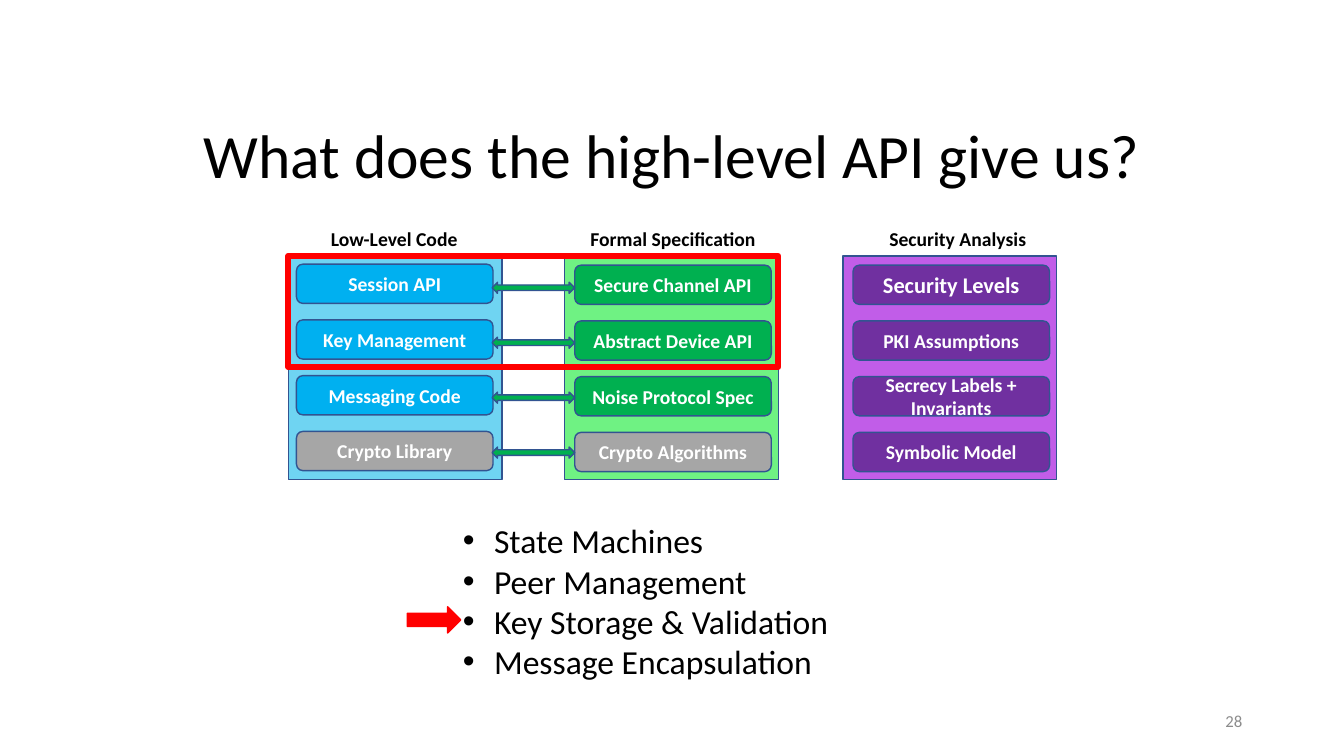
from lxml import etree
from pptx import Presentation
from pptx.dml.color import RGBColor
from pptx.enum.shapes import MSO_SHAPE
from pptx.enum.text import MSO_ANCHOR, MSO_AUTO_SIZE, PP_ALIGN
from pptx.oxml.ns import qn
from pptx.util import Inches, Pt

RECT, CARD = MSO_SHAPE.RECTANGLE, MSO_SHAPE.ROUNDED_RECTANGLE
LINK, POINTER = MSO_SHAPE.LEFT_RIGHT_ARROW, MSO_SHAPE.RIGHT_ARROW
TOP, MIDDLE = MSO_ANCHOR.TOP, MSO_ANCHOR.MIDDLE
LEFT, CENTER, RIGHT = PP_ALIGN.LEFT, PP_ALIGN.CENTER, PP_ALIGN.RIGHT
NO_FIT = MSO_AUTO_SIZE.NONE

FONT = "Calibri"
BLACK, WHITE, GRAY, RED = "000000", "FFFFFF", "A6A6A6", "FF0000"
BLUE, GREEN, PURPLE, OUTLINE = "00B0F0", "00B050", "7030A0", "325491"
PANEL_W, PANEL_H = 2.12, 2.22
CARD_W, CARD_H, CARD_STEP = 1.95, 0.39, 0.553

# left, panel fill, heading, heading offset and width, card offset, cards
COLUMNS = [
    (2.86, "6FD4F2", "Low-Level Code", 0.23, 1.64, (0.08, 0.08),
     [("Session API", BLUE, 14), ("Key Management", BLUE, 14),
      ("Messaging Code", BLUE, 14), ("Crypto Library", GRAY, 14)]),
    (5.6, "6FF283", "Formal Specification", 0.1, 1.95, (0.1, 0.09),
     [("Secure Channel API", GREEN, 14), ("Abstract Device API", GREEN, 14),
      ("Noise Protocol Spec", GREEN, 14), ("Crypto Algorithms", GRAY, 14)]),
    (8.36, "C15DE8", "Security Analysis", 0.32, 1.64, (0.1, 0.09),
     [("Security Levels", PURPLE, 16), ("PKI Assumptions", PURPLE, 14),
      ("Secrecy Labels + Invariants", PURPLE, 14), ("Symbolic Model", PURPLE, 14)]),
]
BENEFITS = ["State Machines", "Peer Management",
            "Key Storage & Validation", "Message Encapsulation"]


def rgb(value):
    return RGBColor.from_string(value)


def place(sp, x, y, w, h):
    sp.left, sp.top, sp.width, sp.height = (Inches(v) for v in (x, y, w, h))


def write(p, text, size, color=BLACK, bold=False, align=LEFT):
    p.alignment = align
    r = p.add_run()
    r.text = text
    r.font.name, r.font.size, r.font.bold = FONT, Pt(size), bold
    r.font.color.rgb = rgb(color)


def add_shape(s, kind, x, y, w, h, fill=None, line=OUTLINE, weight=1):
    sp = s.shapes.add_shape(kind, *(Inches(v) for v in (x, y, w, h)))
    sp.shadow.inherit = False
    if fill:
        sp.fill.solid()
        sp.fill.fore_color.rgb = rgb(fill)
    else:
        sp.fill.background()
    sp.line.color.rgb = rgb(line)
    sp.line.width = Pt(weight)
    return sp


def add_label(s, x, y, w, h, text, size, color=BLACK, bold=False,
              align=CENTER, anchor=TOP):
    sp = s.shapes.add_textbox(*(Inches(v) for v in (x, y, w, h)))
    tf = sp.text_frame
    tf.word_wrap, tf.vertical_anchor = True, anchor
    write(tf.paragraphs[0], text, size, color, bold, align)


def add_title(s, x, y, w, h, text):
    sp = s.shapes.title
    place(sp, x, y, w, h)
    tf = sp.text_frame
    tf.auto_size, tf.vertical_anchor = NO_FIT, TOP
    p = tf.paragraphs[0]
    p.line_spacing = 0.9
    write(p, text, 44, align=CENTER)


def add_column(s, x, y, fill, heading, head_dx, head_w, card_offset, cards):
    add_shape(s, RECT, x, y, PANEL_W, PANEL_H, fill)
    add_label(s, x + head_dx, y - 0.34, head_w, 0.34, heading, 14, bold=True)
    dx, dy = card_offset
    for i, (text, color, size) in enumerate(cards):
        sp = add_shape(s, CARD, x + dx, y + dy + i * CARD_STEP,
                       CARD_W, CARD_H, color)
        tf = sp.text_frame
        tf.word_wrap, tf.vertical_anchor = True, MIDDLE
        write(tf.paragraphs[0], text, size, WHITE, True, CENTER)


def add_stack(s, y):
    for x, *column in COLUMNS:
        add_column(s, x, y, *column)
    # Arrows between code and specification
    for i in range(4):
        add_shape(s, LINK, 4.88, y + 0.26 + i * 0.545, 0.82, 0.11, GREEN)
    # Frame around the high-level API
    add_shape(s, RECT, 2.86, y, 4.86, 1.1, line=RED, weight=4.5)


def add_benefits(s, x, y, w, h):
    sp = s.placeholders[1]
    place(sp, x, y, w, h)
    tf = sp.text_frame
    tf.auto_size, tf.vertical_anchor = NO_FIT, TOP
    for i, text in enumerate(BENEFITS):
        p = tf.add_paragraph() if i else tf.paragraphs[0]
        pPr = p._p.get_or_add_pPr()
        pPr.set("marL", str(Inches(0.31)))
        pPr.set("indent", str(-Inches(0.31)))
        etree.SubElement(pPr, qn("a:buFont")).set("typeface", "Arial")
        etree.SubElement(pPr, qn("a:buChar")).set("char", "•")
        p.space_before = Pt(0)
        write(p, text, 24)
    # Pointer to the third benefit
    add_shape(s, POINTER, x - 0.45, y + 0.91, 0.53, 0.26, RED, RED)


def main():
    prs = Presentation()
    prs.slide_width, prs.slide_height = Inches(13.33), Inches(7.5)
    s = prs.slides.add_slide(prs.slide_layouts[1])
    add_stack(s, 2.54)
    add_title(s, 0.63, 1.19, 12.07, 1.6, "What does the high-level API give us?")
    add_benefits(s, 4.49, 5.11, 6.76, 1.72)
    # Slide number
    add_label(s, 9.42, 6.95, 3, 0.4, "28", 12, "8C8C8C", align=RIGHT, anchor=MIDDLE)
    prs.save("out.pptx")


if __name__ == "__main__":
    main()
